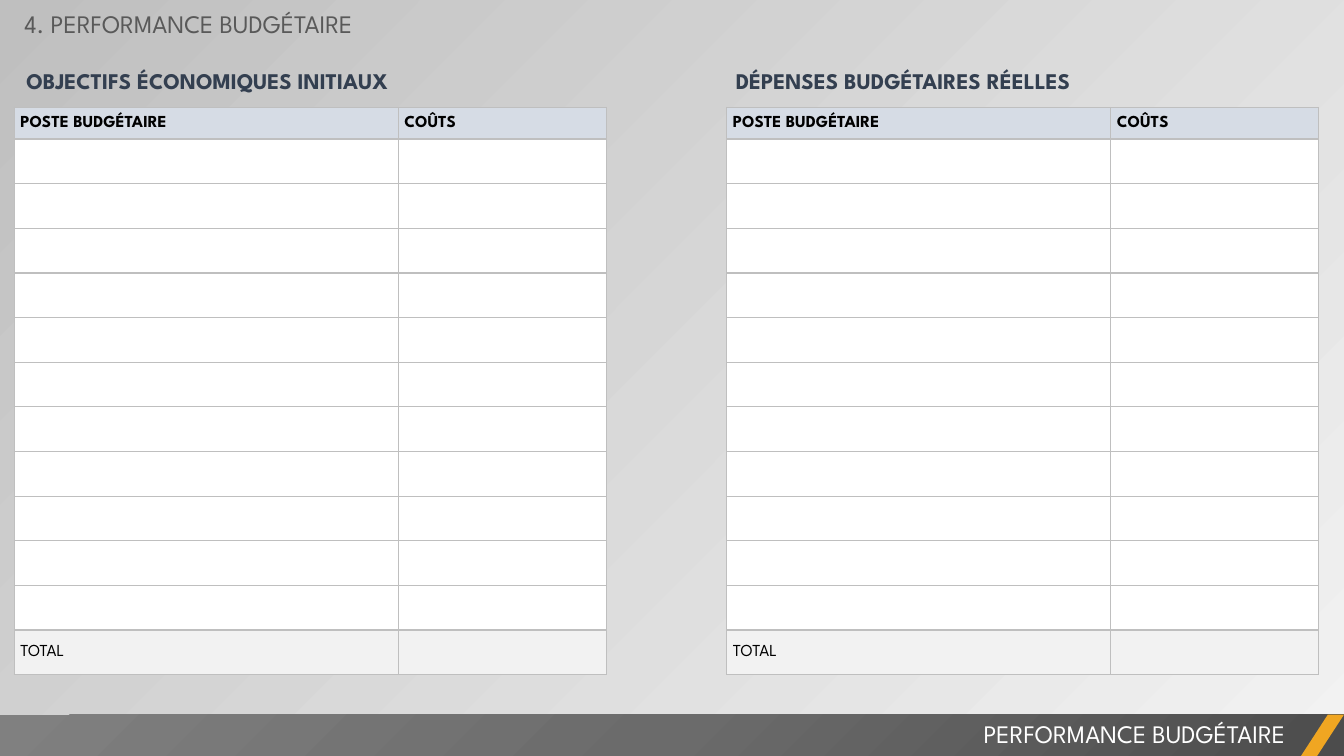
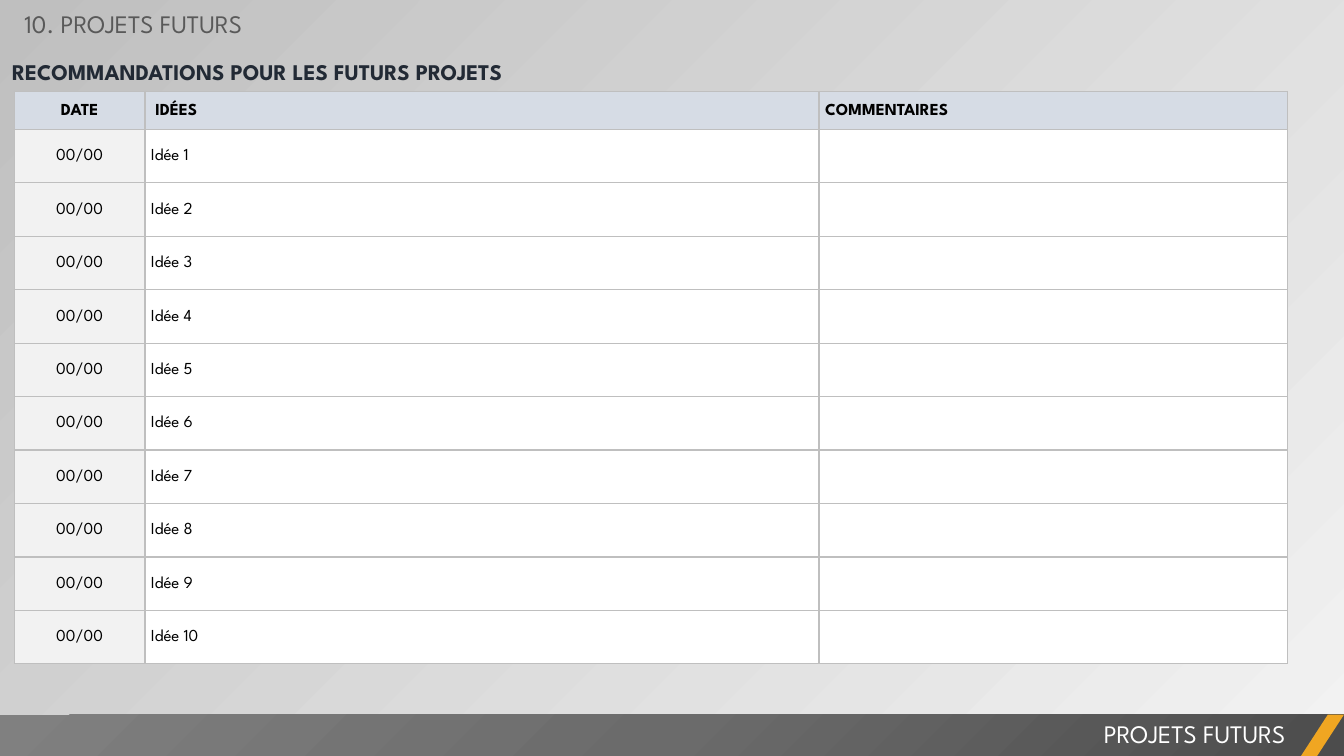
from pptx import Presentation
from pptx.dml.color import RGBColor
from pptx.enum.shapes import MSO_SHAPE
from pptx.enum.text import MSO_ANCHOR, MSO_AUTO_SIZE, PP_ALIGN
from pptx.oxml import parse_xml
from pptx.oxml.ns import nsdecls, qn
from pptx.util import Pt

RECTANGLE, PARALLELOGRAM = MSO_SHAPE.RECTANGLE, MSO_SHAPE.PARALLELOGRAM
TOP, MIDDLE = MSO_ANCHOR.TOP, MSO_ANCHOR.MIDDLE
LEFT, CENTER, RIGHT = PP_ALIGN.LEFT, PP_ALIGN.CENTER, PP_ALIGN.RIGHT
NO_AUTOFIT = MSO_AUTO_SIZE.NONE

FONT = "League Spartan"
WIDTH, HEIGHT = 960, 540
BAND_TOP, BAND_HEIGHT = 510.5, 30
MARGIN = 10.2

WHITE, BLACK = "FFFFFF", "000000"
TITLE_GREY, HEADING_BLUE, HEADING_DARK = "595959", "333F50", "222A35"
HEADER_FILL, SOFT_FILL, GRID = "D6DCE5", "F2F2F2", "BFBFBF"
ACCENT = "F0A622"


def rgb(color):
    return RGBColor.from_string(color)


def box_of(*lengths):
    return [Pt(length) for length in lengths]


def style(paragraph, size, color, bold=False, align=LEFT):
    font = paragraph.font
    font.name, font.size, font.bold = FONT, Pt(size), bold
    font.color.rgb = rgb(color)
    paragraph.alignment = align


def set_gradient(fill, holder, stops, shading):
    """Fill the holder with stops of (position, colour, opacity in %)."""
    fill.gradient()
    gradient = holder.find(qn("a:gradFill"))
    gradient.clear()
    stops_xml = "".join(
        f'<a:gs pos="{position * 1000}"><a:srgbClr val="{color}">'
        f'<a:alpha val="{opacity * 1000}"/></a:srgbClr></a:gs>'
        for position, color, opacity in stops)
    gradient.append(parse_xml(f'<a:gsLst {nsdecls("a")}>{stops_xml}</a:gsLst>'))
    gradient.append(parse_xml(shading))


def add_background(master):
    fill = master.background.fill
    fill.solid()
    set_gradient(fill, master._element.find(".//" + qn("p:bgPr")),
                 [(0, "F2F2F2", 40), (100, "BFBFBF", 100)],
                 f'<a:lin {nsdecls("a")} ang="13500000" scaled="0"/>')


def add_text(slide, box, text, size, color, bold=False, align=LEFT):
    label = slide.shapes.add_textbox(*box_of(*box))
    frame = label.text_frame
    frame.word_wrap = True
    frame.text = text
    style(frame.paragraphs[0], size, color, bold, align)
    return frame


def add_heading(slide, box, text, color, line_spacing):
    frame = add_text(slide, box, text, 16, color, bold=True)
    frame.margin_left = frame.margin_right = Pt(8.6)
    frame.margin_top = frame.margin_bottom = Pt(4.3)
    paragraph = frame.paragraphs[0]
    paragraph.line_spacing = line_spacing
    paragraph.space_before = Pt(3.2)


def add_title(slide, text):
    title = slide.shapes.title
    title.left, title.top, title.width, title.height = box_of(MARGIN, 2.2, 382, 29)
    frame = title.text_frame
    frame.text = text
    frame.auto_size = NO_AUTOFIT
    frame.vertical_anchor = TOP
    style(frame.paragraphs[0], 18, TITLE_GREY)


def add_plain_shape(slide, kind, box):
    shape = slide.shapes.add_shape(kind, *box_of(*box))
    shape.shadow.inherit = False
    shape.line.fill.background()
    return shape


def add_footer(slide, text):
    band = add_plain_shape(slide, RECTANGLE, (0, BAND_TOP, WIDTH, BAND_HEIGHT))
    set_gradient(band.fill, band._element.spPr,
                 [(0, "4C4C4C", 100), (50, "6B6B6B", 100), (100, "808080", 100)],
                 f'<a:path {nsdecls("a")} path="circle">'
                 '<a:fillToRect l="100000" t="100000"/></a:path>')
    add_text(slide, (378, BAND_TOP - 0.7, 547.2, 29), text, 18, WHITE, align=RIGHT)

    # Slanted accent in the corner
    accent = add_plain_shape(slide, PARALLELOGRAM,
                             (WIDTH - 31, BAND_TOP, 31, BAND_HEIGHT))
    accent.adjustments[0] = 0.65
    accent.fill.solid()
    accent.fill.fore_color.rgb = rgb(ACCENT)


def format_cell(cell, text, fill, bold, align):
    cell.margin_left = cell.margin_right = Pt(4.3)
    cell.margin_top = cell.margin_bottom = 0
    cell.vertical_anchor = MIDDLE
    properties = cell._tc.get_or_add_tcPr()
    for side in "LRTB":
        properties.append(parse_xml(
            f'<a:ln{side} {nsdecls("a")} w="12700"><a:solidFill>'
            f'<a:srgbClr val="{GRID}"/></a:solidFill></a:ln{side}>'))
    cell.fill.solid()
    cell.fill.fore_color.rgb = rgb(fill)
    cell.text = text
    paragraph = cell.text_frame.paragraphs[0]
    style(paragraph, 12, BLACK, bold, align)
    paragraph.line_spacing = 1.07


def add_grid(slide, left, top, widths, header_height, row_height, rows,
             soft_cell, centered_columns=()):
    """Place a table; soft_cell(row, column) tells which cells are light grey."""
    total = header_height + row_height * (len(rows) - 1)
    table = slide.shapes.add_table(
        len(rows), len(widths), *box_of(left, top, sum(widths), total)).table
    table.first_row = table.horz_banding = False
    for column, width in zip(table.columns, widths):
        column.width = Pt(width)
    for r, texts in enumerate(rows):
        table.rows[r].height = Pt(row_height if r else header_height)
        for c, text in enumerate(texts):
            body_fill = SOFT_FILL if soft_cell(r, c) else WHITE
            format_cell(table.cell(r, c), text, body_fill if r else HEADER_FILL,
                        bold=r == 0,
                        align=CENTER if c in centered_columns else LEFT)


def add_budget_panel(slide, left, heading_left, heading):
    add_heading(slide, (heading_left, 41, 402, 29), heading, HEADING_BLUE, Pt(21.5))
    rows = [("POSTE BUDGÉTAIRE", "COÛTS"), *[("", "")] * 11, ("TOTAL", "")]
    add_grid(slide, left, 76.8, (274.3, 148.5), 22.5, 31.9, rows,
             soft_cell=lambda r, c: r == len(rows) - 1)


def add_ideas_panel(slide, left, top):
    add_heading(slide, (left - MARGIN, top - 32.2, 602, 29.5),
                "RECOMMANDATIONS POUR LES FUTURS PROJETS", HEADING_DARK, 1.2)
    rows = [("DATE", " IDÉES", "COMMENTAIRES")]
    rows += [("00/00", f"Idée {number}", "") for number in range(1, 11)]
    add_grid(slide, left, top, (93.4, 481.5, 334.5), 27, 38.2, rows,
             soft_cell=lambda r, c: c == 0, centered_columns=(0,))


def add_section(prs, number, name):
    slide = prs.slides.add_slide(prs.slide_layouts[5])
    add_title(slide, f"{number}. {name}")
    add_footer(slide, name)
    return slide


def main():
    prs = Presentation()
    prs.slide_width, prs.slide_height = box_of(WIDTH, HEIGHT)
    add_background(prs.slide_master)

    budget = add_section(prs, 4, "PERFORMANCE BUDGÉTAIRE")
    add_budget_panel(budget, MARGIN, MARGIN, "OBJECTIFS ÉCONOMIQUES INITIAUX")
    add_budget_panel(budget, 519.2, 517, "DÉPENSES BUDGÉTAIRES RÉELLES")

    future = add_section(prs, 10, "PROJETS FUTURS")
    add_ideas_panel(future, MARGIN, 65.4)

    prs.save("out.pptx")


if __name__ == "__main__":
    main()
